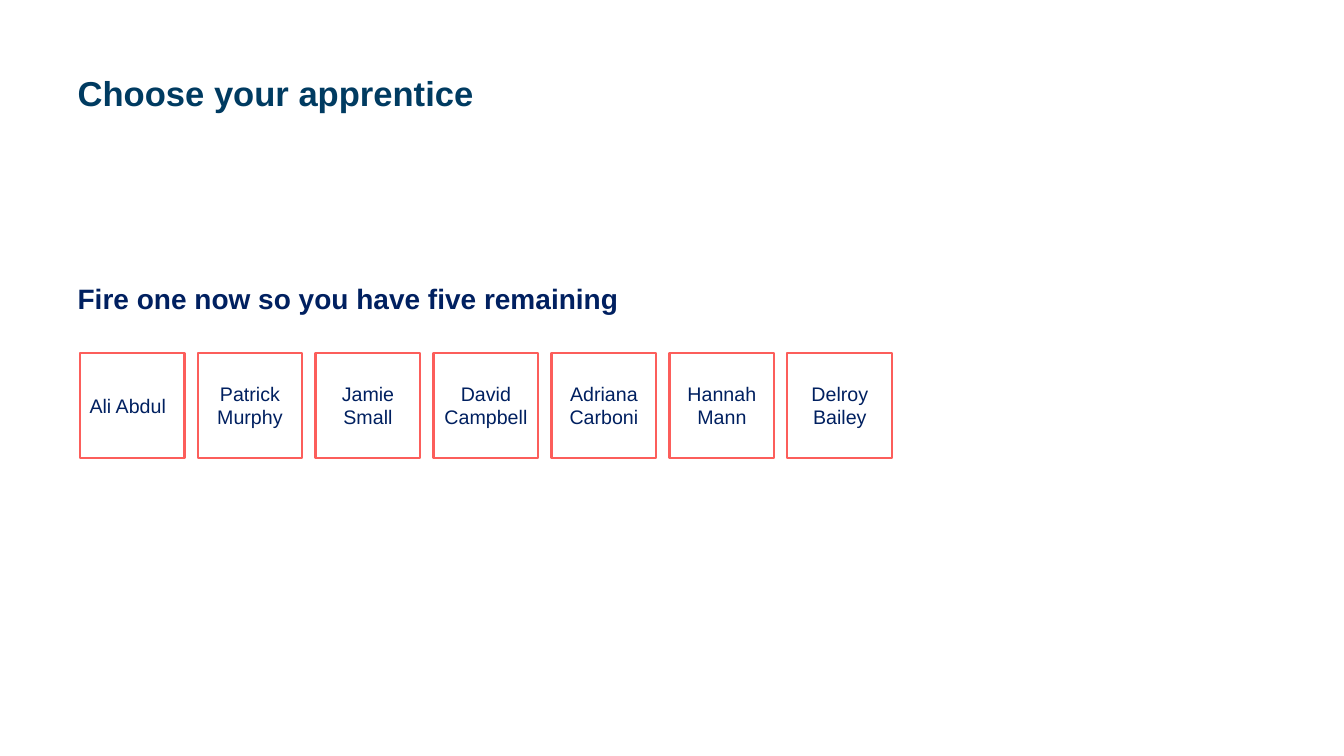
import pptx
import pptx.dml.color
import pptx.enum.shapes
import pptx.enum.text
import pptx.oxml.xmlchemy
import pptx.util

RGBColor = pptx.dml.color.RGBColor
TEAL = RGBColor(0x00, 0x3B, 0x61)
NAVY = RGBColor(0x00, 0x20, 0x60)
CORAL = RGBColor(0xFC, 0x5E, 0x5B)
WHITE = RGBColor(0xFF, 0xFF, 0xFF)

FONT = "Arial"
EMU_PER_PX = 9144  # 100 px to the inch
ALIGN = pptx.enum.text.PP_ALIGN
ANCHOR = pptx.enum.text.MSO_ANCHOR

APPRENTICES = [
    "Ali Abdul", "Patrick Murphy", "Jamie Small", "David Campbell",
    "Adriana Carboni", "Hannah Mann", "Delroy Bailey",
]
CARD_LEFT, CARD_TOP, CARD_SIZE, CARD_STEP = 79, 350, 104, 117


def px(length):
    return pptx.util.Emu(length * EMU_PER_PX)


def write_text(shape, text, size, color, bold, align, anchor):
    frame = shape.text_frame
    frame.word_wrap = True
    frame.auto_size = pptx.enum.text.MSO_AUTO_SIZE.NONE
    frame.vertical_anchor = anchor
    paragraph = frame.paragraphs[0]
    paragraph.alignment = align
    run = paragraph.add_run()
    run.text = text
    run.font.name = FONT
    run.font.size = pptx.util.Pt(size)
    run.font.bold = bold
    run.font.color.rgb = color
    return paragraph


def place(shape, left, top, width, height):
    shape.left, shape.top = px(left), px(top)
    shape.width, shape.height = px(width), px(height)


def fill_title(slide, text):
    title = slide.shapes.title
    place(title, 67, 29, 1003, 125)
    write_text(title, text, 24.7, TEAL, True, ALIGN.LEFT, ANCHOR.MIDDLE)


def fill_body(slide, text):
    body = slide.placeholders[1]
    place(body, 67, 274, 916, 375)
    paragraph = write_text(body, text, 20, NAVY, True, ALIGN.LEFT, ANCHOR.TOP)
    # Plain line: no bullet, no indent
    properties = paragraph._p.get_or_add_pPr()
    properties.set("marL", "0")
    properties.set("indent", "0")
    properties.append(pptx.oxml.xmlchemy.OxmlElement("a:buNone"))
    paragraph.space_before = pptx.util.Pt(0)


def add_card(slide, left, name, align):
    card = slide.shapes.add_shape(
        pptx.enum.shapes.MSO_SHAPE.RECTANGLE,
        px(left), px(CARD_TOP), px(CARD_SIZE), px(CARD_SIZE))
    card.shadow.inherit = False
    card.fill.background()
    card.line.color.rgb = CORAL
    card.line.width = pptx.util.Pt(1.5)
    frame = card.text_frame
    frame.margin_left = frame.margin_right = px(10)
    frame.margin_top = frame.margin_bottom = px(10)
    write_text(card, name, 14, NAVY, False, align, ANCHOR.MIDDLE)


def main():
    presentation = pptx.Presentation()
    presentation.slide_width = pptx.util.Inches(13.33)
    presentation.slide_height = pptx.util.Inches(7.5)
    slide = presentation.slides.add_slide(presentation.slide_layouts[1])
    slide.background.fill.solid()
    slide.background.fill.fore_color.rgb = WHITE

    # Heading and instruction
    fill_title(slide, "Choose your apprentice")
    fill_body(slide, "Fire one now so you have five remaining")

    # Row of apprentices; the first name is set left
    for index, name in enumerate(APPRENTICES):
        align = ALIGN.CENTER if index else ALIGN.LEFT
        add_card(slide, CARD_LEFT + index * CARD_STEP, name, align)

    presentation.save("out.pptx")


if __name__ == "__main__":
    main()
